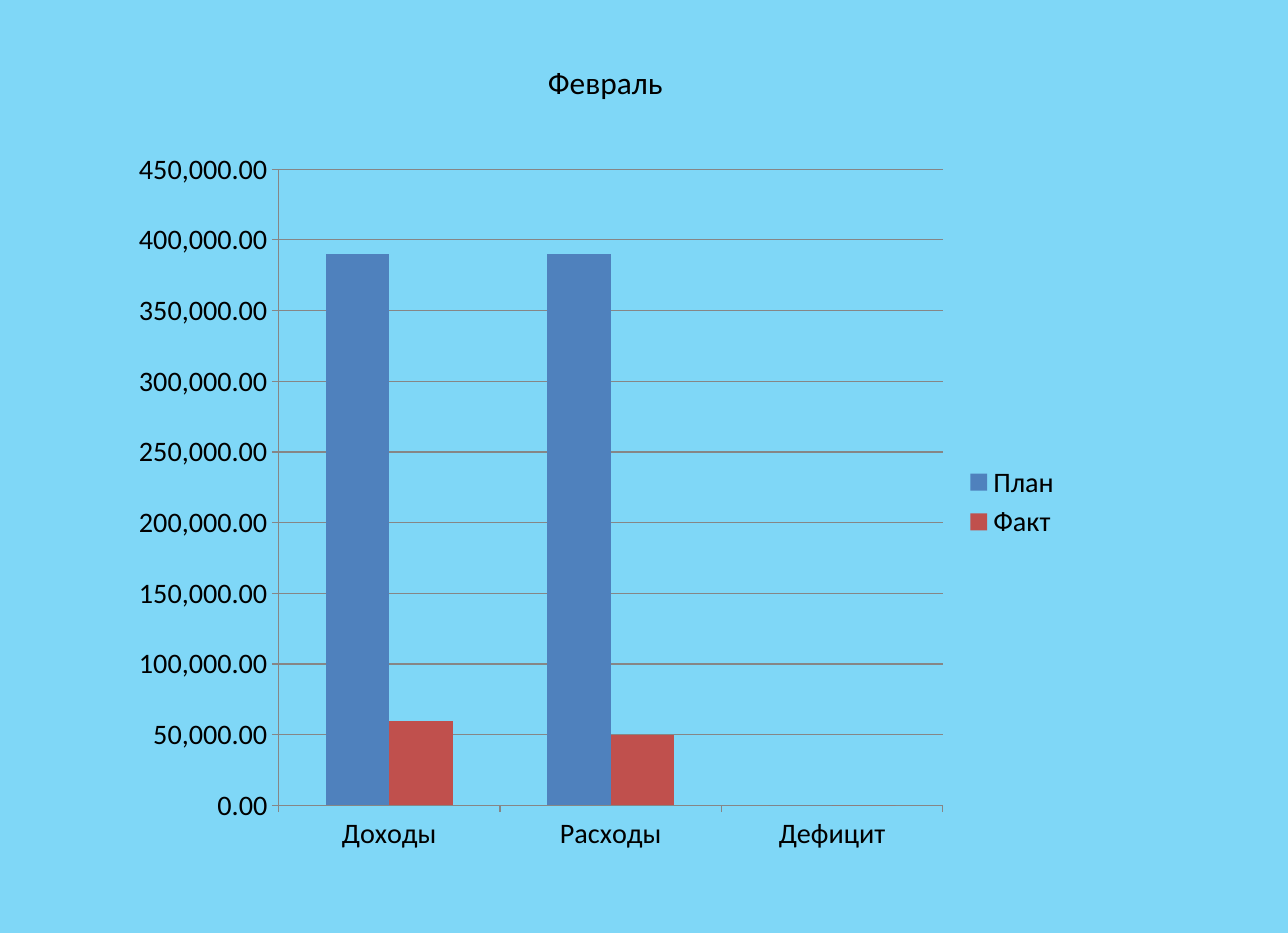
from dataclasses import dataclass

from lxml import etree
from pptx import Presentation
from pptx.chart.data import CategoryChartData
from pptx.dml.color import RGBColor
from pptx.enum.chart import XL_CHART_TYPE, XL_LEGEND_POSITION, XL_TICK_MARK
from pptx.enum.text import MSO_AUTO_SIZE
from pptx.oxml.ns import qn
from pptx.util import Inches, Pt

CLUSTERED = XL_CHART_TYPE.COLUMN_CLUSTERED
LEGEND_RIGHT = XL_LEGEND_POSITION.RIGHT
TICK_OUTSIDE = XL_TICK_MARK.OUTSIDE
FIT_SHAPE = MSO_AUTO_SIZE.SHAPE_TO_FIT_TEXT


@dataclass(frozen=True)
class Theme:
    font: str = "Calibri"
    heading_size: int = 20
    chart_size: int = 18
    background: str = "7FD7F7"
    text: str = "000000"
    rule: str = "868686"
    rule_width: float = 0.75


THEME = Theme()
SLIDE_SIZE = (11.42, 8.27)
HEADING_BOX = (4.76, 0.51, 1.23, 0.44)
BUDGET_BOX = (1.06, 1.22, 8.45, 6.46)
PLOT_INSET = (1.41, 0.28)
PLOT_SIZE = (5.89, 5.64)

MONTH = "Февраль"
ARTICLES = ("Доходы", "Расходы", "Дефицит")
BUDGET = {
    "План": ("4F81BD", (390000, 390000, 0)),
    "Факт": ("C0504D", (60000, 50000, 0)),
}
AMOUNT_SCALE = {
    "minimum_scale": 0,
    "maximum_scale": 450000,
    "major_unit": 50000,
    "has_major_gridlines": True,
}


def apply(target, settings):
    for attribute, value in settings.items():
        setattr(target, attribute, value)


def style_font(font, size):
    apply(font, {"name": THEME.font, "size": Pt(size), "bold": False})
    font.color.rgb = RGBColor.from_string(THEME.text)


def style_rule(line):
    line.color.rgb = RGBColor.from_string(THEME.rule)
    line.width = Pt(THEME.rule_width)


def place_plot(chart, box):
    plot_area = chart.plots[0]._element.getparent()
    for existing in plot_area.findall(qn("c:layout")):
        plot_area.remove(existing)
    layout = etree.Element(qn("c:layout"))
    plot_area.insert(0, layout)
    manual = etree.SubElement(layout, qn("c:manualLayout"))
    lengths = zip("xywh", PLOT_INSET + PLOT_SIZE, box[2:] * 2)
    shares = {tag: length / whole for tag, length, whole in lengths}
    settings = {"layoutTarget": "inner", "xMode": "edge", "yMode": "edge", **shares}
    for tag, value in settings.items():
        etree.SubElement(manual, qn(f"c:{tag}")).set("val", str(value))


def add_heading(slide, box):
    heading = slide.shapes.add_textbox(*map(Inches, box))
    apply(heading.text_frame, {"word_wrap": False, "auto_size": FIT_SHAPE})
    month = heading.text_frame.paragraphs[0].add_run()
    month.text = MONTH
    style_font(month.font, THEME.heading_size)


def add_budget(slide, box):
    amounts = CategoryChartData(number_format="#,##0.00")
    amounts.categories = ARTICLES
    for title, (_, values) in BUDGET.items():
        amounts.add_series(title, values)
    chart = slide.shapes.add_chart(CLUSTERED, *map(Inches, box), amounts).chart
    apply(chart, {"has_title": False, "has_legend": True})
    style_font(chart.font, THEME.chart_size)
    apply(chart.legend, {"position": LEGEND_RIGHT, "include_in_layout": False})

    columns = chart.plots[0]
    apply(columns, {"gap_width": 150, "overlap": 0, "vary_by_categories": False})
    for series, (color, _) in zip(columns.series, BUDGET.values()):
        series.format.fill.solid()
        series.format.fill.fore_color.rgb = RGBColor.from_string(color)

    apply(chart.value_axis, AMOUNT_SCALE)
    apply(
        chart.value_axis.tick_labels,
        {"number_format": "#,##0.00", "number_format_is_linked": False},
    )
    for axis in (chart.category_axis, chart.value_axis):
        axis.major_tick_mark = TICK_OUTSIDE
        style_rule(axis.format.line)
    style_rule(chart.value_axis.major_gridlines.format.line)
    place_plot(chart, box)


def main():
    deck = Presentation()
    deck.slide_width, deck.slide_height = map(Inches, SLIDE_SIZE)
    slide = deck.slides.add_slide(deck.slide_layouts[6])
    slide.background.fill.solid()
    slide.background.fill.fore_color.rgb = RGBColor.from_string(THEME.background)
    add_budget(slide, BUDGET_BOX)
    add_heading(slide, HEADING_BOX)
    deck.save("out.pptx")


if __name__ == "__main__":
    main()
